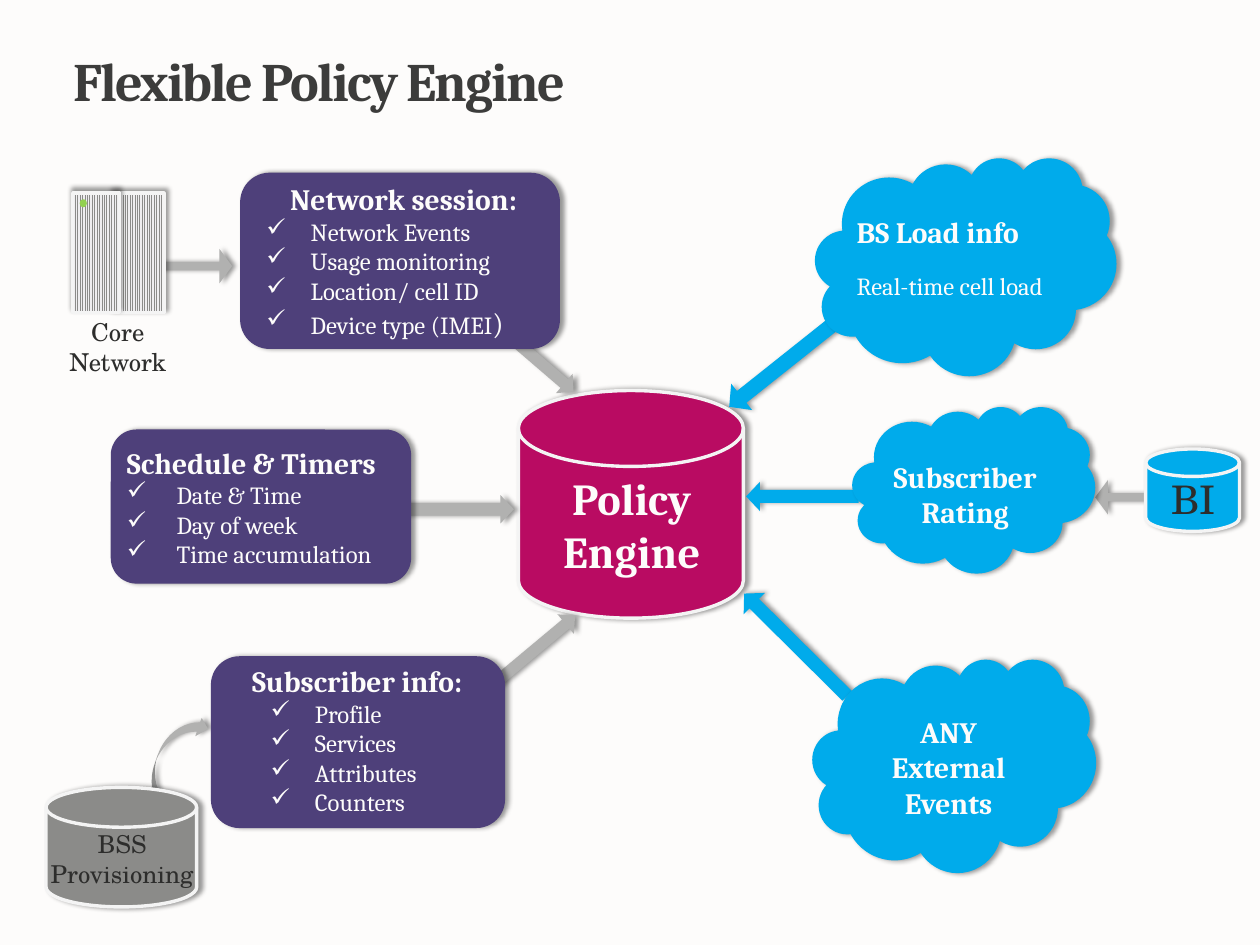
"""Draw the policy engine slide with its inputs and data sources."""
from dataclasses import dataclass

from lxml import etree
from pptx import Presentation
from pptx.dml.color import RGBColor
from pptx.enum.dml import MSO_PATTERN
from pptx.enum.shapes import MSO_SHAPE
from pptx.enum.text import MSO_ANCHOR, PP_ALIGN
from pptx.oxml.ns import qn
from pptx.shapes.autoshape import Shape
from pptx.slide import Slide
from pptx.text.text import TextFrame
from pptx.util import Inches, Pt

CLOUD, DISK = MSO_SHAPE.CLOUD, MSO_SHAPE.FLOWCHART_MAGNETIC_DISK
ROUNDED, RECTANGLE, OVAL = MSO_SHAPE.ROUNDED_RECTANGLE, MSO_SHAPE.RECTANGLE, MSO_SHAPE.OVAL
RIGHT_ARROW, CURVED_ARROW = MSO_SHAPE.RIGHT_ARROW, MSO_SHAPE.CURVED_LEFT_ARROW
LEFT, CENTER = PP_ALIGN.LEFT, PP_ALIGN.CENTER
TOP, MIDDLE = MSO_ANCHOR.TOP, MSO_ANCHOR.MIDDLE
LIGHT_VERTICAL = MSO_PATTERN.LIGHT_VERTICAL

PAPER = RGBColor(0xFD, 0xFC, 0xFB)
TITLE_GREY = RGBColor(0x3C, 0x3C, 0x3B)
INK = RGBColor(0x2D, 0x2D, 0x2C)
EDGE = RGBColor(0xF4, 0xF4, 0xF4)
STRIPE = RGBColor(0xEF, 0xEE, 0xF0)
ARROW_GREY = RGBColor(0xB1, 0xB1, 0xB0)
DARK_GREY = RGBColor(0x8B, 0x8B, 0x89)
MAGENTA = RGBColor(0xB9, 0x0B, 0x62)
BLUE = RGBColor(0x00, 0xAB, 0xEB)
PURPLE = RGBColor(0x4E, 0x40, 0x7A)
GREEN = RGBColor(0x92, 0xD0, 0x50)

SERIF, SCHOOLBOOK = "Cambria", "TeX Gyre Schola"
WIDE_HEAD, NARROW_SHAFT = (0.448, 0.474), (0.24, 0.37)
DEFAULT_INSETS = (0.1, 0.05, 0.1, 0.05)
DISK_INSETS = (0.1, 0.08, 0.08, 0.05)

Box = tuple[float, float, float, float]


@dataclass(frozen=True)
class Piece:
    text: str
    size: float
    bold: bool = False


@dataclass(frozen=True)
class Line:
    pieces: tuple[Piece, ...]
    align: PP_ALIGN = CENTER
    bullet: tuple[float, float] | None = None
    space_before: float = 0


@dataclass(frozen=True)
class Arrow:
    box: Box
    rotation: float
    color: RGBColor
    adjustments: tuple[float, ...] = WIDE_HEAD
    kind: MSO_SHAPE = RIGHT_ARROW


@dataclass(frozen=True)
class Node:
    kind: MSO_SHAPE
    box: Box
    fill: RGBColor
    lines: tuple[Line, ...]
    insets: Box = DEFAULT_INSETS
    wrap: bool = False
    font: str = SERIF
    color: RGBColor = PAPER


def heading(text: str, align: PP_ALIGN = CENTER, size: float = 24) -> Line:
    """Return a bold line."""
    return Line((Piece(text, size, True),), align)


def ticks(margin: float, hanging: float, *items: str) -> tuple[Line, ...]:
    """Return ticked list lines."""
    return tuple(Line((Piece(item, 20),), LEFT, (margin, hanging)) for item in items)


def plain(text: str, size: float) -> Line:
    """Return a centred regular line."""
    return Line((Piece(text, size),))


ARROWS = (
    Arrow((5.12, 7.31, 1.55, 0.29), 320.1, ARROW_GREY),
    Arrow((8.42, 5.44, 1.27, 0.33), 180, BLUE),
    Arrow((8.05, 3.89, 1.65, 0.38), 141.5, BLUE),
    Arrow((4.12, 5.59, 1.68, 0.32), 0, ARROW_GREY),
    Arrow((5.11, 3.77, 1.55, 0.29), 40.7, ARROW_GREY),
    Arrow((8.16, 7.11, 1.64, 0.34), 224.8, BLUE),
    Arrow((1.76, 8.02, 0.44, 1.2), 199.2, ARROW_GREY, (), CURVED_ARROW),
    Arrow((12.36, 5.42, 0.85, 0.39), 180, ARROW_GREY, NARROW_SHAFT),
    Arrow((1.77, 2.81, 0.85, 0.39), 0, ARROW_GREY, NARROW_SHAFT),
)
ENGINE = Node(DISK, (5.85, 4.41, 2.54, 2.57), MAGENTA,
              (heading("Policy\nEngine", size=36),), DISK_INSETS)
NODES = (
    Node(CLOUD, (9.2, 1.78, 3.4, 2.46), BLUE,
         (heading("BS Load info", LEFT),
          Line((Piece("Real-time cell load", 20),), LEFT, space_before=17)),
         (0, 0, 0, 0.1)),
    Node(CLOUD, (9.62, 4.59, 2.74, 1.88), BLUE,
         (heading("Subscriber\nRating"),), (0.1, 0.24, 0.1, 0.05)),
    Node(CLOUD, (9.17, 7.44, 3.2, 2.41), BLUE,
         (heading("ANY\nExternal\nEvents"),), (0.1, 0.19, 0, 0.05)),
    Node(ROUNDED, (2.38, 7.41, 3.32, 1.94), PURPLE,
         (heading("Subscriber info:"),
          *ticks(1, 0.5, "Profile", "Services", "Attributes", "Counters")),
         (0.08, 0, 0.1, 0.05), True),
    Node(ROUNDED, (2.71, 1.95, 3.61, 1.99), PURPLE,
         (heading("Network session:"),
          *ticks(0.5, 0.5, "Network Events", "Usage monitoring", "Location/ cell ID"),
          Line((Piece("Device type (IMEI", 20), Piece(")", 24)), LEFT, (0.5, 0.5))),
         (0.2, 0.05, 0.12, 0.05), True),
    Node(ROUNDED, (1.25, 4.85, 3.39, 1.74), PURPLE,
         (heading("Schedule & Timers", LEFT),
          *ticks(0.56, 0.56, "Date & Time", "Day of week", "Time accumulation")),
         wrap=True),
    Node(DISK, (12.93, 5.07, 1.06, 0.93), BLUE, (plain("BI", 32),),
         DISK_INSETS, font=SCHOOLBOOK, color=INK),
    Node(DISK, (0.52, 8.89, 1.7, 1.35), DARK_GREY, (plain("BSS\nProvisioning", 20),),
         DISK_INSETS, font=SCHOOLBOOK, color=INK),
)


def add_figure(slide: Slide, kind: MSO_SHAPE, box: Box, fill: RGBColor | None,
               outlined: bool = False, shadow_angle: int | None = 0) -> Shape:
    """Add a preset shape, striped when it has no fill colour."""
    shape = slide.shapes.add_shape(kind, *map(Inches, box))
    if fill is None:
        shape.fill.patterned()
        shape.fill.pattern = LIGHT_VERTICAL
        shape.fill.fore_color.rgb, shape.fill.back_color.rgb = STRIPE, DARK_GREY
    else:
        shape.fill.solid()
        shape.fill.fore_color.rgb = fill
    if outlined:
        shape.line.color.rgb = EDGE
        shape.line.width = Pt(2.75)
    else:
        shape.line.fill.background()
    shape.shadow.inherit = False
    if shadow_angle is not None:
        effects = shape._element.spPr.find(qn("a:effectLst"))
        shadow = etree.SubElement(effects, qn("a:outerShdw"), blurRad=str(Pt(4)),
                                  dist=str(Pt(3)), dir=str(shadow_angle * 60000),
                                  algn="ctr", rotWithShape="0")
        color = etree.SubElement(shadow, qn("a:srgbClr"), val="000000")
        etree.SubElement(color, qn("a:alpha"), val="40000")
    return shape


def write(frame: TextFrame, lines: tuple[Line, ...], font: str, color: RGBColor,
          insets: Box, wrap: bool, anchor: MSO_ANCHOR, spacing: int = 0) -> None:
    """Fill a text frame with lines."""
    frame.word_wrap, frame.vertical_anchor = wrap, anchor
    (frame.margin_left, frame.margin_top,
     frame.margin_right, frame.margin_bottom) = map(Inches, insets)
    for index, line in enumerate(lines):
        paragraph = frame.add_paragraph() if index else frame.paragraphs[0]
        paragraph.alignment = line.align
        if line.space_before:
            paragraph.space_before = Pt(line.space_before)
        if line.bullet:
            margin, hanging = line.bullet
            properties = paragraph._p.get_or_add_pPr()
            properties.set("marL", str(Inches(margin)))
            properties.set("indent", str(-Inches(hanging)))
            etree.SubElement(properties, qn("a:buChar"), char="✓")
        for piece in line.pieces:
            for row, text in enumerate(piece.text.split("\n")):
                if row:
                    paragraph.add_line_break()
                run = paragraph.add_run()
                run.text = text
                run.font.name, run.font.size = font, Pt(piece.size)
                run.font.bold, run.font.color.rgb = piece.bold, color
                if spacing:
                    run._r.get_or_add_rPr().set("spc", str(spacing))


def add_node(slide: Slide, node: Node) -> None:
    """Add a labelled shape."""
    shape = add_figure(slide, node.kind, node.box, node.fill, node.kind == DISK)
    write(shape.text_frame, node.lines, node.font, node.color, node.insets, node.wrap, MIDDLE)


def main() -> None:
    """Build and save the slide."""
    presentation = Presentation()
    presentation.slide_width, presentation.slide_height = Inches(14.22), Inches(10.67)
    slide = presentation.slides.add_slide(presentation.slide_layouts[6])
    slide.background.fill.solid()
    slide.background.fill.fore_color.rgb = PAPER
    add_node(slide, ENGINE)
    for arrow in ARROWS:
        shape = add_figure(slide, arrow.kind, arrow.box, arrow.color)
        shape.rotation = arrow.rotation
        for index, value in enumerate(arrow.adjustments):
            shape.adjustments[index] = value
    title = slide.shapes.add_textbox(*map(Inches, (0.83, 0.53, 9.12, 0.61)))
    write(title.text_frame, (heading("Flexible Policy Engine", LEFT, 44),), SERIF,
          TITLE_GREY, (0, 0, 0, 0), True, TOP, -150)
    for node in NODES:
        add_node(slide, node)
    add_figure(slide, RECTANGLE, (1.25, 2.18, 0.6, 1.35), None, True, 315)
    label = slide.shapes.add_textbox(*map(Inches, (0.46, 3.53, 1.74, 0.77)))
    write(label.text_frame, (plain("Core Network", 20),), SCHOOLBOOK, INK,
          DEFAULT_INSETS, True, TOP)
    add_figure(slide, RECTANGLE, (0.82, 2.18, 0.53, 1.35), None, True, 270)
    add_figure(slide, OVAL, (0.9, 2.25, 0.08, 0.09), GREEN, shadow_angle=None)
    presentation.save("out.pptx")


if __name__ == "__main__":
    main()
